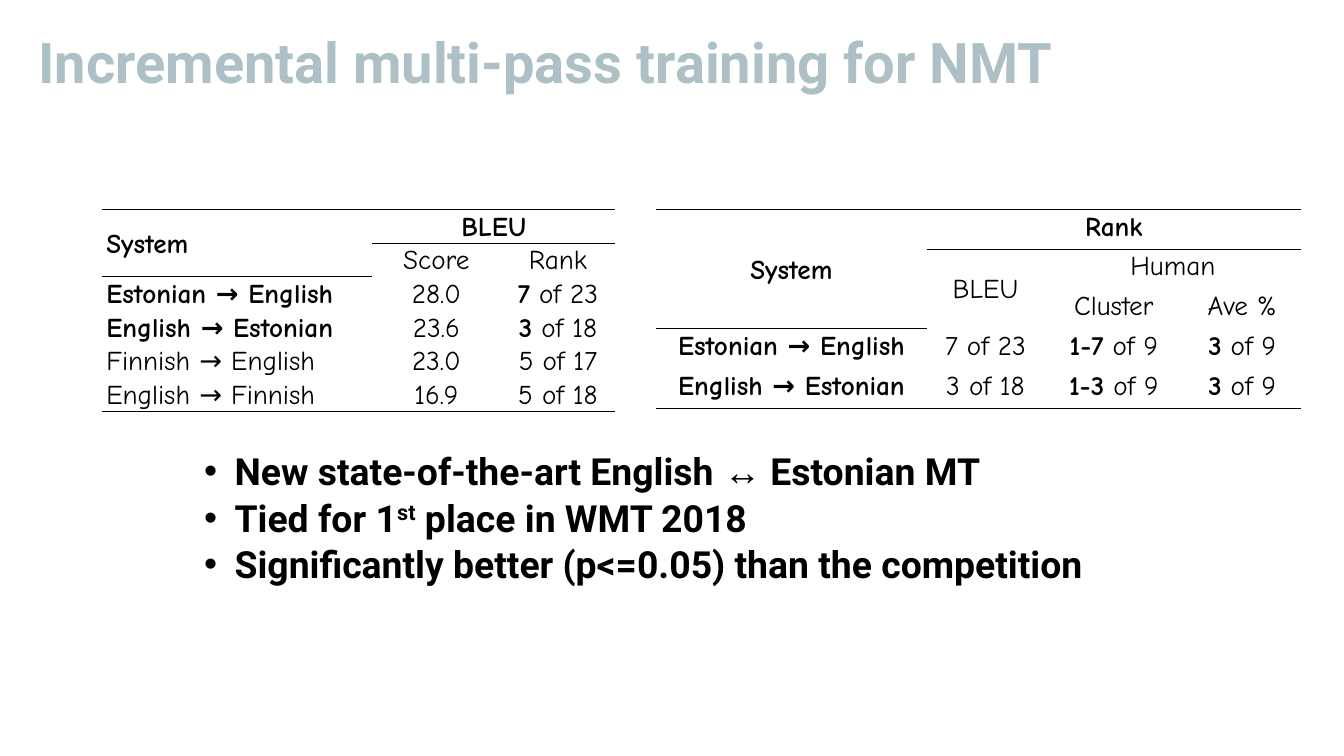
import pptx
import pptx.dml.color
import pptx.enum.text
import pptx.oxml
import pptx.oxml.ns
import pptx.util
from pptx.util import Inches

ALIGN = pptx.enum.text.PP_ALIGN
ANCHOR = pptx.enum.text.MSO_ANCHOR
NAMESPACE = pptx.oxml.ns.nsdecls("a")
BLACK = "000000"
PLAIN_TABLE = "{2D5ABB26-0587-4C30-8999-92F81FD0307C}"

SCORE_ROWS = [
    ["*System*", "*BLEU*", ""],
    ["", "Score", "Rank"],
    ["*Estonian → English*", "28.0", "*7* of 23"],
    ["*English → Estonian*", "23.6", "*3* of 18"],
    ["Finnish → English", "23.0", "5 of 17"],
    ["English → Finnish", "16.9", "5 of 18"],
]
RANK_ROWS = [
    ["*System*", "*Rank*", "", ""],
    ["", "BLEU", "Human", ""],
    ["", "", "Cluster", "Ave %"],
    ["*Estonian → English*", "7 of 23", "*1-7* of 9", "*3* of 9"],
    ["*English → Estonian*", "3 of 18", "*1-3* of 9", "*3* of 9"],
]
BULLETS = [
    [("New state-of-the-art English ", {}),
     ("↔", {"name": "Arial", "bold": False}),
     (" Estonian MT", {})],
    [("Tied for 1", {}), ("st", {"baseline": 30000}), (" place in WMT 2018", {})],
    [("Significantly better (p<=0.05) than the competition", {})],
]


def color(value):
    return pptx.dml.color.RGBColor.from_string(value)


def set_all(target, values):
    for name, value in values.items():
        setattr(target, name, value)


def add_span(para, text, size, name, bold=True, fill=BLACK, baseline=None):
    span = para.add_run()
    span.text = text
    set_all(span.font, {"size": pptx.util.Pt(size), "name": name, "bold": bold})
    span.font.color.rgb = color(fill)
    if baseline:
        span._r.get_or_add_rPr().set("baseline", str(baseline))


def set_frame(frame, side, top):
    set_all(frame, {
        "word_wrap": True, "vertical_anchor": ANCHOR.TOP,
        "auto_size": pptx.enum.text.MSO_AUTO_SIZE.NONE,
        "margin_left": Inches(side), "margin_right": Inches(side),
        "margin_top": Inches(top), "margin_bottom": Inches(0.05),
    })


def fill_title(slide, text):
    title = slide.shapes.title
    set_all(title, {"left": Inches(0.58), "top": Inches(0.6),
                    "width": Inches(20.83), "height": Inches(1.75)})
    set_frame(title.text_frame, 0.05, 0.1)
    para = title.text_frame.paragraphs[0]
    set_all(para, {"alignment": ALIGN.LEFT, "line_spacing": 0.76})
    add_span(para, text, 66, "Roboto", fill="ACC0C6")


def add_bullets(slide, items):
    box = slide.shapes.add_textbox(Inches(3.24), Inches(7.27), Inches(17.58), Inches(3.08))
    frame = box.text_frame
    set_frame(frame, 0.1, 0.05)
    for index, item in enumerate(items):
        para = frame.add_paragraph() if index else frame.paragraphs[0]
        para.line_spacing = 1.03
        properties = para._p.get_or_add_pPr()
        properties.set("marL", str(Inches(0.5)))
        properties.set("indent", str(Inches(-0.5)))
        for bullet in ('buFont {} typeface="Arial"', 'buChar {} char="•"'):
            properties.append(pptx.oxml.parse_xml(f"<a:{bullet.format(NAMESPACE)}/>"))
        for text, changes in item:
            add_span(para, text, 44, **{"name": "Roboto", **changes})


def add_rule(cell, edge):
    cell._tc.get_or_add_tcPr().append(pptx.oxml.parse_xml(
        f'<a:{edge} {NAMESPACE} w="12700"><a:solidFill><a:srgbClr val="{BLACK}"/>'
        f"</a:solidFill></a:{edge}>"))


def fill_cell(cell, text, alignment, anchor):
    set_all(cell, {"margin_left": Inches(0.07), "margin_right": Inches(0.07),
                   "margin_top": 0, "margin_bottom": 0, "vertical_anchor": anchor})
    cell.fill.background()
    para = cell.text_frame.paragraphs[0]
    set_all(para, {"alignment": alignment, "line_spacing": 1.07})
    for index, part in enumerate(text.split("*")):
        if part:
            add_span(para, part, 32, "Comic Neue", bold=index % 2 == 1)


def add_result_table(slide, left, widths, row_height, rows, merges, header_rows, first_align):
    table = slide.shapes.add_table(
        len(rows), len(widths), Inches(left), Inches(3.43),
        Inches(sum(widths)), Inches(row_height * len(rows))).table
    set_all(table, {"first_row": False, "horz_banding": False})
    table._tbl.tblPr.find(pptx.oxml.ns.qn("a:tableStyleId")).text = PLAIN_TABLE
    for column, width in zip(table.columns, widths):
        column.width = Inches(width)
    for row in table.rows:
        row.height = Inches(row_height)
    for first, last in merges:
        table.cell(*first).merge(table.cell(*last))
    for r, row in enumerate(rows):
        for c, text in enumerate(row):
            cell = table.cell(r, c)
            if r == 0:
                add_rule(cell, "lnT")
            if r in (0, len(rows) - 1) or (c == 0 and r == header_rows - 1):
                add_rule(cell, "lnB")
            tall = cell.is_merge_origin and cell.span_height > 1
            fill_cell(cell, text, ALIGN.CENTER if c else first_align,
                      ANCHOR.MIDDLE if tall else ANCHOR.TOP)


def main():
    deck = pptx.Presentation()
    set_all(deck, {"slide_width": Inches(21.99), "slide_height": Inches(12.37)})
    slide = deck.slides.add_slide(deck.slide_layouts[5])
    fill_title(slide, "Incremental multi-pass training for NMT")
    add_result_table(slide, 1.67, [4.42, 2.1, 1.88], 0.55, SCORE_ROWS,
                     [((0, 0), (1, 0)), ((0, 1), (0, 2))], 2, ALIGN.LEFT)
    add_result_table(slide, 10.74, [4.42, 1.93, 2.27, 1.93], 0.65, RANK_ROWS,
                     [((0, 0), (2, 0)), ((0, 1), (0, 3)),
                      ((1, 1), (2, 1)), ((1, 2), (1, 3))], 3, ALIGN.CENTER)
    add_bullets(slide, BULLETS)
    deck.save("out.pptx")


if __name__ == "__main__":
    main()
